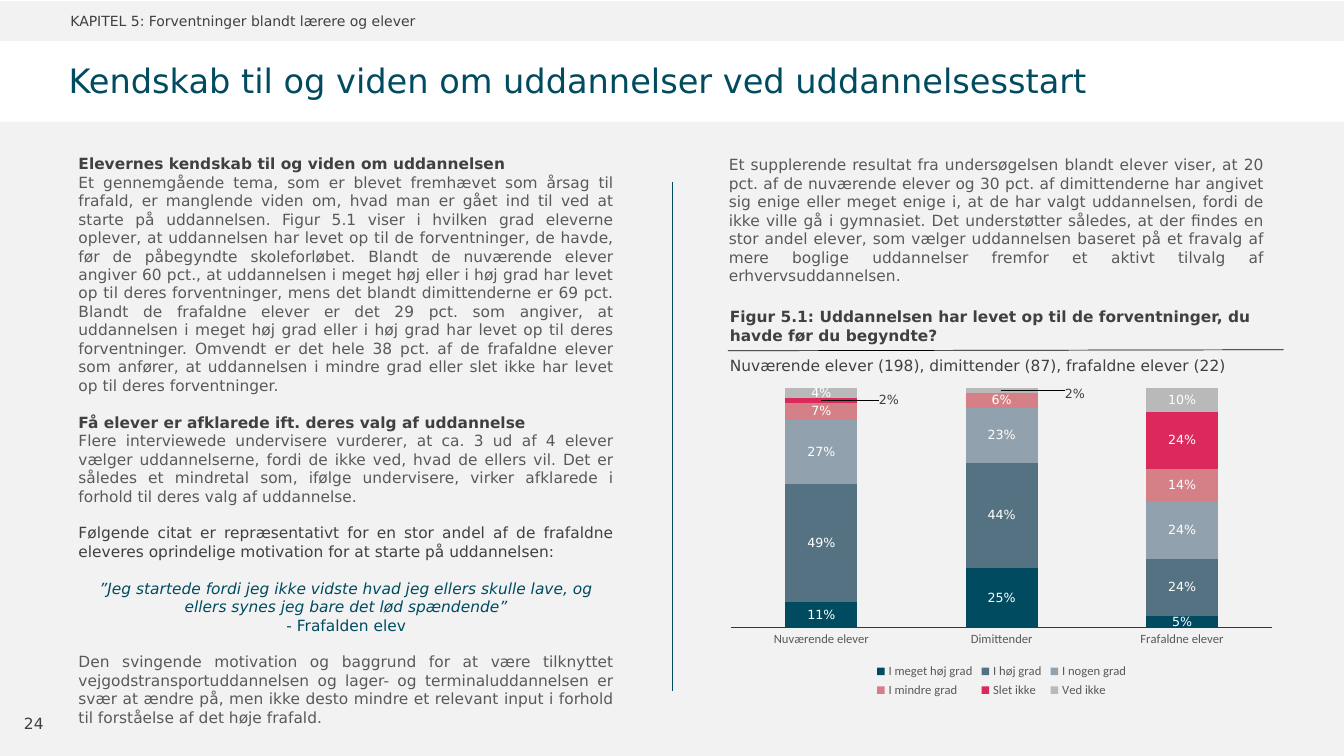
"""Build the slide on pupils' expectations with its text columns and stacked chart."""
import dataclasses
import typing

import lxml.etree
import pptx
import pptx.chart.data
import pptx.dml.color
import pptx.enum.chart
import pptx.enum.shapes
import pptx.enum.text
import pptx.oxml
import pptx.oxml.ns
import pptx.util

Inches = pptx.util.Inches
Pt = pptx.util.Pt
Align = pptx.enum.text.PP_ALIGN
Anchor = pptx.enum.text.MSO_ANCHOR
Place = tuple[float, float, float, float]


@dataclasses.dataclass(frozen=True)
class Theme:
    """Colours, fonts and type sizes of the slide."""
    teal: str = "004B60"
    dark: str = "404040"
    grey: str = "595959"
    pale: str = "F2F2F2"
    white: str = "FFFFFF"
    black: str = "000000"
    text_font: str = "DejaVu Sans"
    chart_font: str = "Calibri"
    title: float = 24
    body: float = 11
    small: float = 10
    label: float = 9


THEME = Theme()


@dataclasses.dataclass(frozen=True)
class Para:
    """One paragraph with its look."""
    text: str
    color: str = THEME.dark
    size: float = THEME.body
    bold: bool = False
    italic: bool = False
    align: Align = Align.LEFT
    before: float = 0
    spacing: float = 1.0


@dataclasses.dataclass(frozen=True)
class TextBox:
    """A text box with its place and paragraphs."""
    place: Place
    paras: tuple[Para, ...]
    anchor: Anchor = Anchor.TOP
    inset: tuple[float, float] = (0.1, 0.05)


@dataclasses.dataclass(frozen=True)
class Rule:
    """A thin straight line."""
    start: tuple[float, float]
    end: tuple[float, float]
    color: str


@dataclasses.dataclass(frozen=True)
class Answer:
    """One answer category of the chart."""
    name: str
    values: tuple[float, float, float]
    color: str
    label_color: str = THEME.white


@dataclasses.dataclass(frozen=True)
class PointLabel:
    """A label that departs from the rest of its series."""
    series: int
    point: int
    color: str
    shift: typing.Optional[tuple[float, float]] = None


GAP = 13
BANDS: list[Place] = [(0, 0.01, 13.33, 0.4), (0, 1.21, 13.33, 6.29)]
RULES = [Rule((6.67, 1.81), (6.67, 6.86), THEME.teal), Rule((7.22, 3.48), (12.73, 3.47), THEME.black)]
ARTICLE = (
    Para("Elevernes kendskab til og viden om uddannelsen", bold=True),
    Para("Et gennemgående tema, som er blevet fremhævet som årsag til frafald, er manglende viden om, hvad man er gået ind til ved at starte på uddannelsen. Figur 5.1 viser i hvilken grad eleverne oplever, at uddannelsen har levet op til de forventninger, de havde, før de påbegyndte skoleforløbet. Blandt de nuværende elever angiver 60 pct., at uddannelsen i meget høj eller i høj grad har levet op til deres forventninger, mens det blandt dimittenderne er 69 pct. Blandt de frafaldne elever er det 29 pct. som angiver, at uddannelsen i meget høj grad eller i høj grad har levet op til deres forventninger. Omvendt er det hele 38 pct. af de frafaldne elever som anfører, at uddannelsen i mindre grad eller slet ikke har levet op til deres forventninger.", THEME.grey, align=Align.JUSTIFY),
    Para("Få elever er afklarede ift. deres valg af uddannelse", bold=True, before=GAP),
    Para("Flere interviewede undervisere vurderer, at ca. 3 ud af 4 elever vælger uddannelserne, fordi de ikke ved, hvad de ellers vil. Det er således et mindretal som, ifølge undervisere, virker afklarede i forhold til deres valg af uddannelse.", THEME.grey, align=Align.JUSTIFY),
    Para("Følgende citat er repræsentativt for en stor andel af de frafaldne eleveres oprindelige motivation for at starte på uddannelsen:", align=Align.JUSTIFY, before=GAP),
    Para("”Jeg startede fordi jeg ikke vidste hvad jeg ellers skulle lave, og ellers synes jeg bare det lød spændende”", THEME.teal, italic=True, align=Align.CENTER, before=GAP),
    Para("- Frafalden elev", THEME.teal, align=Align.CENTER),
    Para("Den svingende motivation og baggrund for at være tilknyttet vejgodstransportuddannelsen og lager- og terminaluddannelsen er svær at ændre på, men ikke desto mindre et relevant input i forhold til forståelse af det høje frafald.", THEME.grey, align=Align.JUSTIFY, before=GAP),
)
SUPPLEMENT = Para("Et supplerende resultat fra undersøgelsen blandt elever viser, at 20 pct. af de nuværende elever og 30 pct. af dimittenderne har angivet sig enige eller meget enige i, at de har valgt uddannelsen, fordi de ikke ville gå i gymnasiet. Det understøtter således, at der findes en stor andel elever, som vælger uddannelsen baseret på et fravalg af mere boglige uddannelser fremfor et aktivt tilvalg af erhvervsuddannelsen.", THEME.grey, align=Align.JUSTIFY)
BOXES = [
    TextBox((0.68, 1.48, 5.51, 5.21), ARTICLE),
    TextBox((0.09, 6.98, 0.49, 0.4), (Para("24", align=Align.CENTER),), Anchor.MIDDLE),
    TextBox((0.68, 0.42, 11.89, 0.79), (Para("Kendskab til og viden om uddannelser ved uddannelsesstart", THEME.teal, THEME.title, spacing=0.9),), Anchor.MIDDLE, (0, 0)),
    TextBox((7.14, 3, 5.51, 0.52), (Para("Figur 5.1: Uddannelsen har levet op til de forventninger, du havde før du begyndte?", bold=True),)),
    TextBox((0.6, 0, 5.7, 0.41), (Para("KAPITEL 5: Forventninger blandt lærere og elever", size=THEME.small),), Anchor.MIDDLE),
    TextBox((7.14, 3.48, 5.51, 0.26), (Para("Nuværende elever (198), dimittender (87), frafaldne elever (22)"),)),
    TextBox((7.13, 1.49, 5.51, 5.75), (SUPPLEMENT,)),
]
GROUPS = ("Nuværende elever", "Dimittender", "Frafaldne elever")
ANSWERS = [
    Answer("I meget høj grad", (0.11, 0.25, 0.05), THEME.teal),
    Answer("I høj grad", (0.49, 0.44, 0.24), "547282"),
    Answer("I nogen grad", (0.27, 0.23, 0.24), "91A1AD"),
    Answer("I mindre grad", (0.07, 0.06, 0.14), "D48086"),
    Answer("Slet ikke", (0.02, 0, 0.24), "DC295C", THEME.dark),
    Answer("Ved ikke", (0.04, 0.02, 0.1), "B9B9B9"),
]
POINT_LABELS = [
    PointLabel(4, 0, THEME.dark, (0.12, 0)),
    PointLabel(4, 2, THEME.white),
    PointLabel(5, 1, THEME.dark, (0.13, 0.01)),
]


def rgb(code: str) -> pptx.dml.color.RGBColor:
    """Turn a hex code into a colour."""
    return pptx.dml.color.RGBColor.from_string(code)


def apply(target: typing.Any, values: dict[str, typing.Any]) -> None:
    """Set each named attribute on the target."""
    for name, value in values.items():
        setattr(target, name, value)


def style_font(font: typing.Any, size: float, color: str, name: str, bold: bool = False, italic: bool = False) -> None:
    """Give a font its full look."""
    apply(font, {"size": Pt(size), "name": name, "bold": bold, "italic": italic})
    font.color.rgb = rgb(color)


def draw_band(page: typing.Any, place: Place) -> None:
    """Draw a pale background band."""
    band = page.shapes.add_shape(pptx.enum.shapes.MSO_SHAPE.RECTANGLE, *map(Inches, place))
    band.shadow.inherit = False
    band.fill.solid()
    band.fill.fore_color.rgb = rgb(THEME.pale)
    band.line.fill.background()


def draw_rule(page: typing.Any, rule: Rule) -> None:
    """Draw a thin line without shadow."""
    line = page.shapes.add_connector(pptx.enum.shapes.MSO_CONNECTOR.STRAIGHT, *map(Inches, rule.start + rule.end))
    line.line.color.rgb = rgb(rule.color)
    line.line.width = Pt(0.5)
    lxml.etree.SubElement(line._element.spPr, pptx.oxml.ns.qn("a:effectLst"))


def draw_text(page: typing.Any, item: TextBox) -> None:
    """Draw a text box and its paragraphs."""
    frame = page.shapes.add_textbox(*map(Inches, item.place)).text_frame
    side, top = map(Inches, item.inset)
    apply(frame, {"word_wrap": True, "vertical_anchor": item.anchor, "margin_left": side,
                  "margin_right": side, "margin_top": top, "margin_bottom": top})
    for index, para in enumerate(item.paras):
        target = frame.add_paragraph() if index else frame.paragraphs[0]
        apply(target, {"alignment": para.align, "line_spacing": para.spacing})
        if para.before:
            target.space_before = Pt(para.before)
        span = target.add_run()
        span.text = para.text
        style_font(span.font, para.size, para.color, THEME.text_font, para.bold, para.italic)


def layout_xml(values: dict[str, typing.Any]) -> typing.Any:
    """Make a manual layout element for a chart part."""
    parts = "".join(f'<c:{name} val="{value}"/>' for name, value in values.items())
    space = pptx.oxml.ns.nsdecls("c")
    return pptx.oxml.parse_xml(f"<c:layout {space}><c:manualLayout>{parts}</c:manualLayout></c:layout>")


def label_element(series: typing.Any, point: int) -> typing.Any:
    """Find the label element of one point."""
    return series._element.xpath(f'./c:dLbls/c:dLbl[c:idx/@val="{point}"]')[0]


def draw_chart(page: typing.Any, place: Place) -> None:
    """Draw the stacked chart of answers by group."""
    data = pptx.chart.data.CategoryChartData(number_format="0%")
    data.categories = GROUPS
    for answer in ANSWERS:
        data.add_series(answer.name, answer.values)
    kind = pptx.enum.chart.XL_CHART_TYPE.COLUMN_STACKED_100
    chart = page.shapes.add_chart(kind, *map(Inches, place), data).chart
    style_font(chart.font, THEME.small, THEME.black, THEME.chart_font)
    apply(chart, {"has_title": False, "has_legend": True})
    apply(chart.legend, {"position": pptx.enum.chart.XL_LEGEND_POSITION.BOTTOM, "include_in_layout": False})
    apply(chart.value_axis, {"visible": False, "has_major_gridlines": False})
    axis = chart.category_axis
    axis.major_tick_mark = pptx.enum.chart.XL_TICK_MARK.NONE
    axis.format.line.color.rgb = rgb(THEME.teal)
    axis.format.line.width = Pt(0.75)
    for font in (chart.legend.font, axis.tick_labels.font):
        style_font(font, THEME.label, THEME.grey, THEME.chart_font)
    plot = chart.plots[0]
    apply(plot, {"gap_width": 150, "overlap": 100, "vary_by_categories": False})
    for series, answer in zip(plot.series, ANSWERS):
        series.format.fill.solid()
        series.format.fill.fore_color.rgb = rgb(answer.color)
        apply(series.data_labels, {"show_value": True, "number_format": "0%", "number_format_is_linked": False,
                                   "position": pptx.enum.chart.XL_LABEL_POSITION.CENTER})
        style_font(series.data_labels.font, THEME.label, answer.label_color, THEME.text_font)
        for point, value in enumerate(answer.values):
            if not value:
                series.points[point].data_label.position = pptx.enum.chart.XL_LABEL_POSITION.CENTER
                label = label_element(series, point)
                for child in list(label)[1:]:
                    label.remove(child)
                lxml.etree.SubElement(label, pptx.oxml.ns.qn("c:delete")).set("val", "1")
    for item in POINT_LABELS:
        series = plot.series[item.series]
        style_font(series.points[item.point].data_label.font, THEME.label, item.color, THEME.text_font)
        if item.shift:
            label_element(series, item.point)[0].addnext(layout_xml(dict(zip("xy", item.shift))))
    area = chart._chartSpace.chart.plotArea
    for old in area.findall(pptx.oxml.ns.qn("c:layout")):
        area.remove(old)
    edges = {"xMode": "edge", "yMode": "edge"}
    area.insert(0, layout_xml({"layoutTarget": "inner", **edges, "x": 0.02, "y": 0.02, "w": 0.96, "h": 0.75}))
    legend = chart.legend._element
    for old in legend.findall(pptx.oxml.ns.qn("c:layout")):
        legend.remove(old)
    legend[0].addnext(layout_xml({**edges, "x": 0.27, "y": 0.87, "w": 0.46, "h": 0.13}))


def main() -> None:
    """Build and save the deck."""
    deck = pptx.Presentation()
    apply(deck, {"slide_width": Inches(13.33), "slide_height": Inches(7.5)})
    page = deck.slides.add_slide(deck.slide_layouts[6])
    for band in BANDS:
        draw_band(page, band)
    for rule in RULES:
        draw_rule(page, rule)
    for box in BOXES:
        draw_text(page, box)
    draw_chart(page, (7.14, 3.79, 5.59, 3.17))
    deck.save("out.pptx")


if __name__ == "__main__":
    main()
